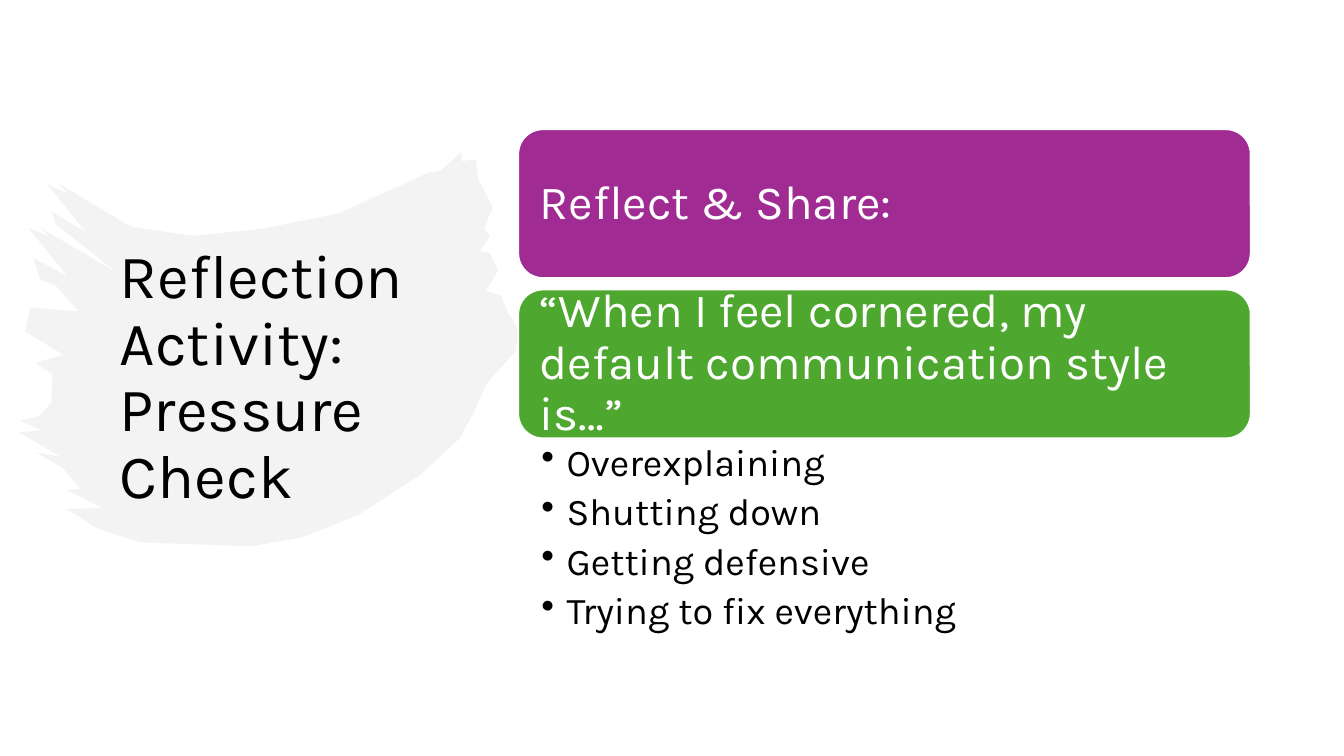
import pptx
import pptx.util
import pptx.dml.color
import pptx.enum.shapes
import pptx.enum.text
import pptx.oxml.ns
import lxml.etree

Pt = pptx.util.Pt
COLOURS = {"brush": "E8E8E8", "share": "A02B93", "prompt": "4EA72E", "text": "000000", "light": "FFFFFF"}
FONT = "Karla"


def colour(name):
    return pptx.dml.color.RGBColor.from_string(COLOURS[name])


def write(shape, lines, size, ink, anchor, insets):
    frame = shape.text_frame
    frame.word_wrap = True
    frame.vertical_anchor = anchor
    frame.margin_left, frame.margin_top, frame.margin_right, frame.margin_bottom = map(Pt, insets)
    frame.text = "\n".join(lines)
    for paragraph in frame.paragraphs:
        paragraph.alignment = pptx.enum.text.PP_ALIGN.LEFT
        paragraph.line_spacing = 0.9
        font = paragraph.runs[0].font
        font.name = FONT
        font.size = Pt(size)
        font.color.rgb = colour(ink)
    return frame


deck = pptx.Presentation()
deck.slide_width = Pt(960)
deck.slide_height = Pt(540)
slide = deck.slides.add_slide(deck.slide_layouts[6])
MIDDLE = pptx.enum.text.MSO_ANCHOR.MIDDLE
TOP = pptx.enum.text.MSO_ANCHOR.TOP

brush_points = [
    (458, 150), (458, 160), (472, 158), (474, 177), (489, 206), (480, 226), (486, 235), (476, 249),
    (486, 251), (494, 268), (482, 289), (497, 293), (503, 308), (514, 327), (512, 348), (483, 380),
    (470, 409), (456, 435), (417, 471), (355, 511), (300, 533), (249, 542), (139, 538), (98, 525),
    (66, 505), (102, 504), (66, 486), (80, 485), (62, 464), (36, 449), (60, 453), (19, 429),
    (41, 427), (20, 417), (39, 413), (51, 399), (52, 371), (35, 360), (63, 352), (25, 329),
    (30, 305), (78, 309), (56, 284), (40, 277), (33, 256), (67, 274), (28, 226), (49, 235),
    (40, 226), (117, 271), (56, 223), (51, 210), (85, 230), (46, 182), (67, 192), (58, 182),
    (130, 225), (192, 234), (260, 227), (335, 212), (402, 182), (423, 172), (438, 169),
]
builder = slide.shapes.build_freeform(*brush_points[0], scale=Pt(0.72))
builder.add_line_segments(brush_points[1:], close=True)
brush = builder.convert_to_shape()
brush.shadow.inherit = False
brush.fill.solid()
brush.fill.fore_color.rgb = colour("brush")
brush.line.fill.background()
brush_colour = brush._element.spPr.find(".//" + pptx.oxml.ns.qn("a:srgbClr"))
lxml.etree.SubElement(brush_colour, pptx.oxml.ns.qn("a:alpha")).set("val", "50000")

title = slide.shapes.add_textbox(Pt(78.5), Pt(54), Pt(275), Pt(432.7))
write(title, ["Reflection Activity: Pressure Check"], 44, "text", MIDDLE, (7.2, 3.6, 7.2, 3.6))

cards = [
    ("share", "Reflect & Share:"),
    ("prompt", "“When I feel cornered, my default communication style is…”"),
]
for row, (fill, words) in enumerate(cards):
    card = slide.shapes.add_shape(
        pptx.enum.shapes.MSO_SHAPE.ROUNDED_RECTANGLE,
        Pt(370.1), Pt(92.2 + row * 114.5), Pt(523.4), Pt(106.5))
    card.shadow.inherit = False
    card.fill.solid()
    card.fill.fore_color.rgb = colour(fill)
    card.line.color.rgb = colour("light")
    card.line.width = Pt(1.5)
    write(card, [words], 34, "light", MIDDLE, (10.2, 10.2, 10.2, 10.2))

styles = slide.shapes.add_textbox(Pt(370.1), Pt(313.2), Pt(523.4), Pt(146.9))
answers = ["Overexplaining", "Shutting down", "Getting defensive", "Trying to fix everything"]
for answer in write(styles, answers, 27, "text", TOP, (16.6, 3.6, 18.7, 3.6)).paragraphs:
    answer.space_after = Pt(6.2)
    properties = answer._p.get_or_add_pPr()
    properties.set("marL", str(Pt(18)))
    properties.set("indent", str(-Pt(18)))
    lxml.etree.SubElement(properties, pptx.oxml.ns.qn("a:buChar")).set("char", "•")

deck.save("out.pptx")
